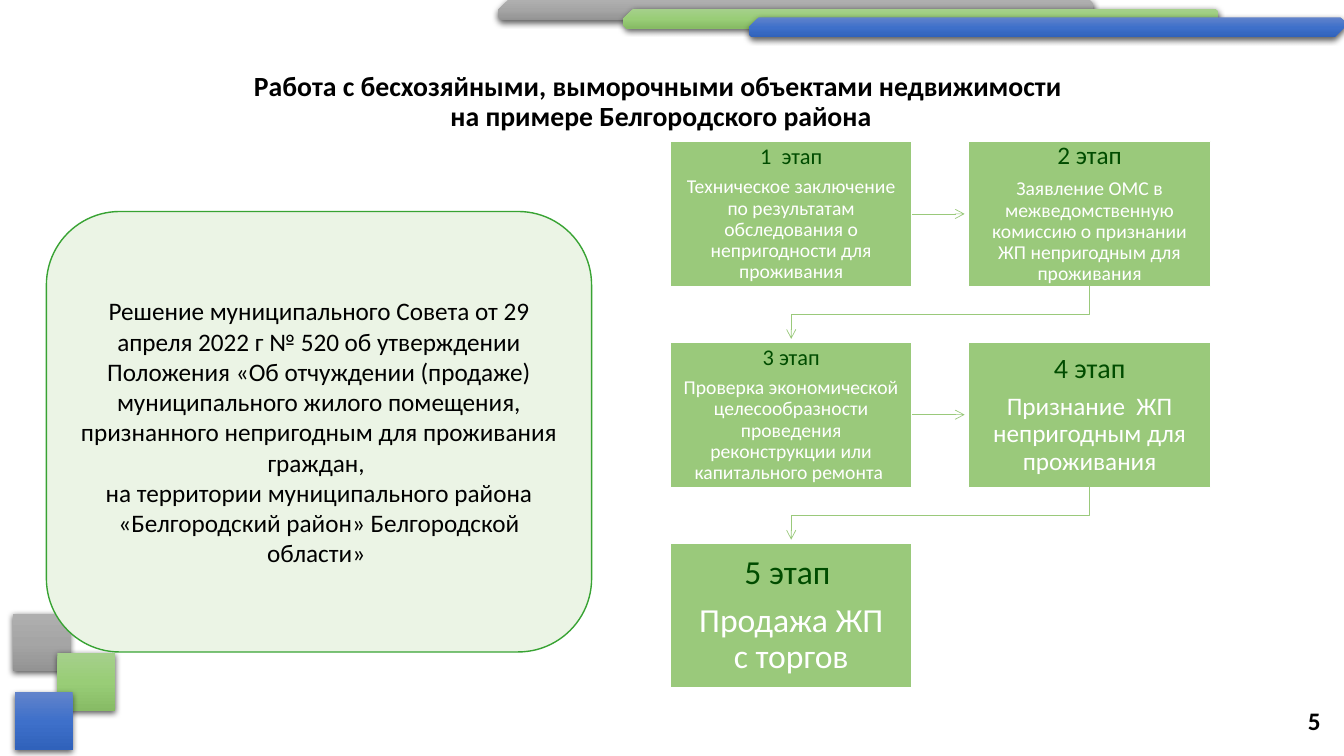
from dataclasses import dataclass

import pptx
import pptx.dml.color
import pptx.enum.shapes
import pptx.enum.text
import pptx.oxml
import pptx.oxml.ns
import pptx.util
from copy import deepcopy

Cm, Pt = pptx.util.Cm, pptx.util.Pt
MSO = pptx.enum.shapes.MSO_SHAPE
ALIGN = pptx.enum.text.PP_ALIGN
NS = pptx.oxml.ns.nsdecls("a")


def rgb(code):
    return pptx.dml.color.RGBColor.from_string(code)


@dataclass(frozen=True)
class Theme:
    font: str = "Calibri"
    ink: str = "000000"
    white: str = "FFFFFF"
    step: str = "9AC97B"
    step_head: str = "004C00"
    panel: str = "EBF4E5"
    panel_line: str = "38A333"
    title_size: float = 19.8
    text_size: float = 18
    # gradient colours of the decoration: grey, green, blue
    accents: tuple = (("AFAFAF", "A5A5A5", "939393"),
                      ("A5D08B", "99CD77", "87BB65"),
                      ("6183CB", "3E70CA", "3062BB"))


class SlideBuilder:
    def __init__(self, s, theme):
        self.s, self.theme = s, theme

    def style(self, p, size, color, bold=False, align=ALIGN.CENTER, spacing=None):
        p.alignment = align
        p.line_spacing = spacing
        p.font.name, p.font.size, p.font.bold = self.theme.font, Pt(size), bold
        p.font.color.rgb = rgb(color)

    def frame(self, sp, texts, inset=None):
        """Prepare a text frame and return its paragraphs."""
        tf = sp.text_frame
        tf.word_wrap = True
        tf.auto_size = pptx.enum.text.MSO_AUTO_SIZE.NONE
        tf.vertical_anchor = pptx.enum.text.MSO_ANCHOR.MIDDLE
        if inset is not None:
            tf.margin_left = tf.margin_right = Cm(inset)
            tf.margin_top = tf.margin_bottom = Cm(inset)
        tf.text = "\n".join(texts)
        return tf.paragraphs

    def title(self, box, text):
        sp = self.s.shapes.title
        sp.left, sp.top, sp.width, sp.height = map(Cm, box)
        p = self.frame(sp, [text])[0]
        self.style(p, self.theme.title_size, self.theme.ink, bold=True, spacing=0.9)

    def number(self, box, text):
        sp = self.s.shapes.add_textbox(*map(Cm, box))
        p = self.frame(sp, [text])[0]
        self.style(p, self.theme.text_size, self.theme.ink, bold=True, align=ALIGN.RIGHT)

    def shape(self, kind, box, fill, line):
        sp = self.s.shapes.add_shape(kind, *map(Cm, box))
        sp.shadow.inherit = False
        sp.fill.solid()
        sp.fill.fore_color.rgb = rgb(fill)
        sp.line.color.rgb = rgb(line)
        sp.line.width = Pt(1)
        return sp

    def decoration(self, kind, box, colors):
        """Shape with a three-stop vertical gradient and a soft shadow."""
        sp = self.s.shapes.add_shape(kind, *map(Cm, box))
        sp.line.fill.background()
        sp.fill.gradient()
        sp.fill.gradient_angle = 270
        stops = sp._element.spPr.xpath(".//a:gsLst")[0]
        stops.insert(1, deepcopy(stops[0]))
        for stop, color, position in zip(sp.fill.gradient_stops, colors, (0, 0.5, 1)):
            stop.color.rgb = rgb(color)
            stop.position = position
        sp._element.spPr.append(pptx.oxml.parse_xml(
            f'<a:effectLst {NS}><a:outerShdw blurRad="57150" dist="19050" dir="5400000"'
            ' algn="ctr" rotWithShape="0"><a:srgbClr val="000000"><a:alpha val="63000"/>'
            '</a:srgbClr></a:outerShdw></a:effectLst>'))
        return sp

    def panel(self, box, texts):
        sp = self.shape(MSO.ROUNDED_RECTANGLE, box, self.theme.panel, self.theme.panel_line)
        for p in self.frame(sp, texts):
            self.style(p, self.theme.text_size, self.theme.ink)

    def step(self, box, head, body, head_size, body_size, inset):
        sp = self.shape(MSO.RECTANGLE, box, self.theme.step, self.theme.white)
        p_head, p_body = self.frame(sp, [head, body], inset)
        self.style(p_head, head_size, self.theme.step_head, spacing=0.9)
        self.style(p_body, body_size, self.theme.white, spacing=0.9)
        p_head.space_after = Pt(round(0.35 * head_size, 1))

    def arrow_style(self, sp):
        sp.line.color.rgb = rgb(self.theme.step)
        sp.line.width = Pt(0.5)
        sp.line._get_or_add_ln().append(
            pptx.oxml.parse_xml(f'<a:tailEnd {NS} type="arrow"/>'))

    def arrow(self, x1, y1, x2, y2):
        sp = self.s.shapes.add_connector(
            pptx.enum.shapes.MSO_CONNECTOR.STRAIGHT, *map(Cm, (x1, y1, x2, y2)))
        self.arrow_style(sp)
        sp._element.spPr.append(pptx.oxml.parse_xml(f"<a:effectLst {NS}/>"))

    def bent_arrow(self, points):
        start, *rest = [(Cm(x), Cm(y)) for x, y in points]
        pen = self.s.shapes.build_freeform(*start)
        pen.add_line_segments(rest, close=False)
        sp = pen.convert_to_shape()
        sp.fill.background()
        sp.shadow.inherit = False
        self.arrow_style(sp)


# Steps: heading, text, heading size, text size, inset
STEPS = [
    ("1  этап", "Техническое заключение по результатам обследования о непригодности "
     "для проживания", 16, 14, 0.3),
    ("2 этап", "Заявление ОМС в межведомственную комиссию о признании ЖП непригодным "
     "для проживания", 18, 14, 0.36),
    ("3 этап", "Проверка экономической целесообразности проведения реконструкции или "
     "капитального ремонта ", 16, 14, 0.3),
    ("4 этап", "Признание  ЖП непригодным для проживания", 20, 18, 0.41),
    ("5 этап ", "Продажа ЖП с торгов", 24, 24, 0.48),
]
LEFT, TOP, WIDTH, HEIGHT = 16.89, 3.56, 6.1, 3.66
STEP_X, STEP_Y = 7.56 - 0.04, 5.06


def main():
    prs = pptx.Presentation()
    prs.slide_width, prs.slide_height = Cm(33.87), Cm(19.05)
    s = prs.slides.add_slide(prs.slide_layouts[5])
    theme = Theme()
    b = SlideBuilder(s, theme)

    # Decoration: bars at the top, squares at the bottom left
    for i, colors in enumerate(theme.accents):
        bar = b.decoration(MSO.SNIP_2_DIAG_RECTANGLE,
                           (12.55 + 3.16 * i, 0.22 * i, 15, 0.5), colors)
        bar.adjustments[0] = 0.5
        bar.adjustments[1] = 0.17
    for i, (x, colors) in enumerate(zip((0.33, 1.45, 0.38), theme.accents)):
        b.decoration(MSO.RECTANGLE, (x, 15.47 + 0.99 * i, 1.45, 1.45), colors)

    # Title and slide number
    b.title((2.34, 1.65, 28.63, 1.88),
            "Работа с бесхозяйными, выморочными объектами недвижимости \v"
            "на примере Белгородского района")
    b.number((25.91, 17.65, 7.62, 1.02), "5")

    # Council decision
    b.panel((1.17, 5.33, 13.74, 11.1), [
        "Решение муниципального Совета от 29 апреля 2022 г № 520 об утверждении "
        "Положения «Об отчуждении (продаже) муниципального жилого помещения, "
        "признанного непригодным для проживания граждан, ",
        "на территории муниципального района «Белгородский район» Белгородской области» "])

    # Steps in two columns, each with an arrow to the next
    for i, step in enumerate(STEPS):
        row, col = divmod(i, 2)
        x, y = LEFT + col * STEP_X, TOP + row * STEP_Y
        b.step((x, y, WIDTH, HEIGHT), *step)
        if i == len(STEPS) - 1:
            break
        if col == 0:
            middle = y + HEIGHT / 2
            b.arrow(x + WIDTH, middle, x + WIDTH + 1.32, middle)
        else:
            center, bottom = x + WIDTH / 2, y + HEIGHT
            b.bent_arrow([(center, bottom), (center, bottom + 0.71),
                          (center - STEP_X, bottom + 0.71),
                          (center - STEP_X, bottom + 1.32)])

    prs.save("out.pptx")


if __name__ == "__main__":
    main()
